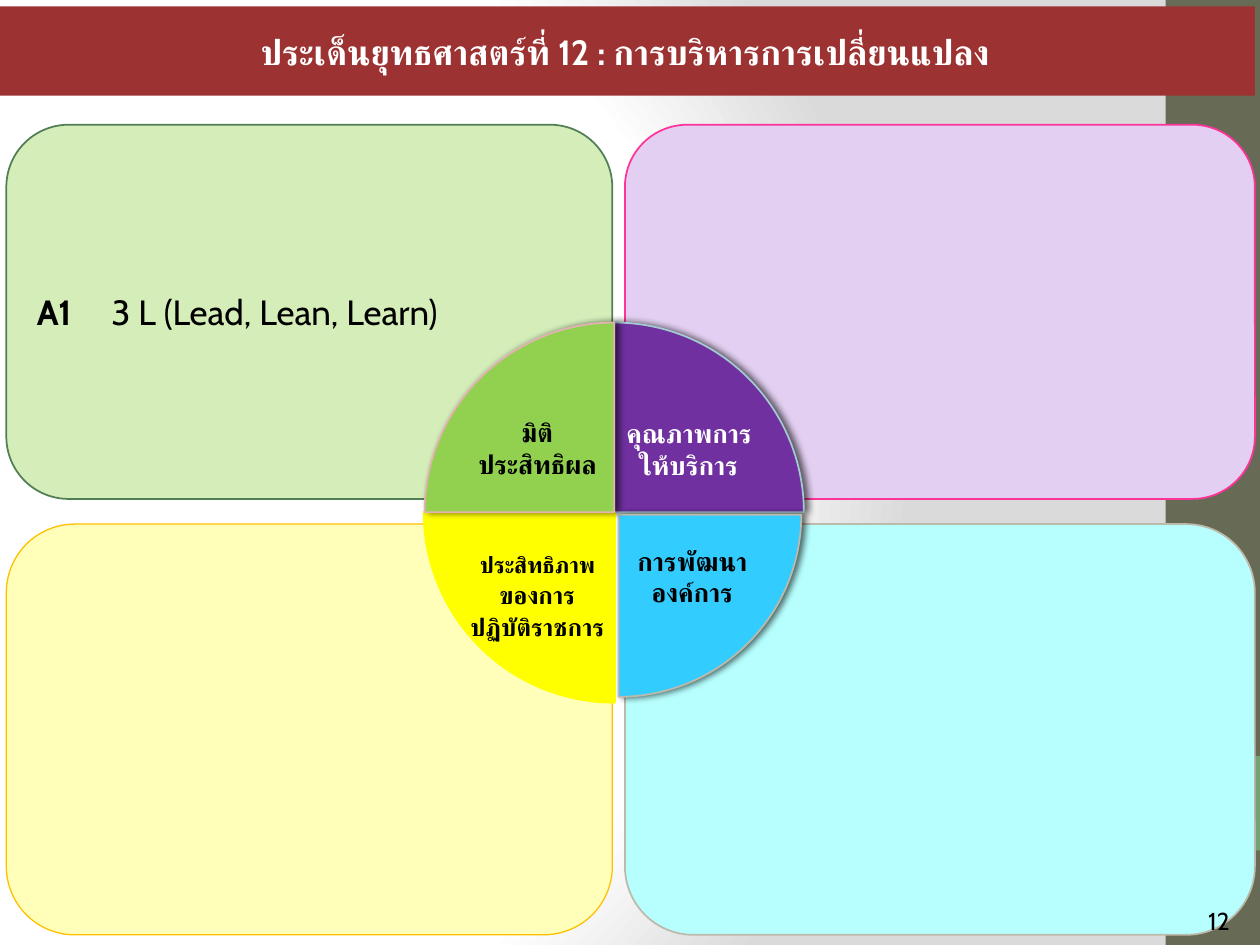
"""Build a slide of four strategy panels around a quartered wheel."""
from lxml import etree
from pptx import Presentation, util as u
from pptx.dml.color import RGBColor
from pptx.enum import shapes, text
from pptx.oxml import parse_xml
from pptx.oxml.ns import nsdecls, qn

WIDTH, HEIGHT = 10, 7.5
FONT = "Cabin"
COLORS = dict(
    white="FFFFFF", black="000000", red="9D3232", mist="DADADA", olive="676A55", sage="72A376",
    cream="FFFFB9", gold="FFC000", aqua="B7FFFF", stone="BCBAAB", lilac="E2CFF1", pink="FF3399",
    mint="D4EDB9", forest="527E56", purple="7030A0", ice="A3C9D3", sky="33CCFF",
    yellow="FFFF00", lime="92D050", rose="E4B2B2",
)
TITLE = "ประเด็นยุทธศาสตร์ที่ 12 : การบริหารการเปลี่ยนแปลง"
GOAL = [("A1\t", True), ("3 L (Lead, Lean, Learn)", False)]
COLUMNS = [(0.05, 4.81), (4.96, 5)]
ROWS = [(0.99, 2.97), (4.16, 3.26)]
PANELS = [
    (0, 1, "cream", "gold", 0.75, []),
    (1, 1, "aqua", "stone", 1, []),
    (1, 0, "lilac", "pink", 1, []),
    (0, 0, "mint", "forest", 1, GOAL),
]
WHEEL = (3.37, 2.56, 3.01, 3.01)
QUARTERS = [
    (WHEEL, (162, 0), "purple", "ice", 1, True,
     (4.91, 3.12), [("คุณภาพการให้บริการ", 15)], "white"),
    ((3.46, 2.64, 2.9, 2.89), (0, 54), "sky", "stone", 1, True,
     (4.94, 4.13), [("การพัฒนาองค์การ", 15)], "black"),
    (WHEEL, (54, 108), "yellow", "yellow", 2, False,
     (3.71, 4.27), [("ประสิทธิภาพ", 13), ("ของการปฏิบัติราชการ", 14)], "black"),
    (WHEEL, (108, 162), "lime", "rose", 1, True,
     (3.71, 3.11), [("มิติประสิทธิผล", 15)], "black"),
]
LABEL_SIZE = (1.11, 0.89)


def color(name):
    return RGBColor.from_string(COLORS[name])


def add_box(page, kind, place, fill, line=None, weight=1):
    box = page.shapes.add_shape(kind, *map(u.Inches, place))
    box.shadow.inherit = False
    box.fill.solid()
    box.fill.fore_color.rgb = color(fill)
    if line:
        box.line.color.rgb = color(line)
        box.line.width = u.Pt(weight)
    else:
        box.line.fill.background()
    return box


def add_span(para, words, size=20, bold=False, ink="black"):
    span = para.add_run()
    span.text = words
    span.font.size = u.Pt(size)
    span.font.bold = bold
    span.font.name = FONT
    span.font.color.rgb = color(ink)
    etree.SubElement(span._r.get_or_add_rPr(), qn("a:cs")).set("typeface", FONT)


def set_frame(box, inset=None, anchor=text.MSO_ANCHOR.MIDDLE, align=text.PP_ALIGN.CENTER):
    frame = box.text_frame
    frame.word_wrap = True
    frame.auto_size = text.MSO_AUTO_SIZE.NONE
    frame.vertical_anchor = anchor
    if inset is not None:
        frame.margin_left = frame.margin_right = u.Inches(inset)
        frame.margin_top = frame.margin_bottom = u.Inches(inset)
    para = frame.paragraphs[0]
    para.alignment = align
    return para


def add_shadow(box):
    effects = box._element.spPr.find(qn("a:effectLst"))
    effects.append(parse_xml(
        f'<a:outerShdw {nsdecls("a")} blurRad="{u.Pt(4)}" dist="{u.Pt(2)}" dir="0">'
        f'<a:srgbClr val="{COLORS["black"]}"><a:alpha val="60000"/></a:srgbClr></a:outerShdw>'))


def set_background(page):
    stops = "".join(
        f'<a:gs pos="{share * 1000}"><a:srgbClr val="{COLORS[name]}"/></a:gs>'
        for share, name in [(0, "white"), (75, "white"), (100, "mist")])
    page._element.cSld.insert(0, parse_xml(
        f'<p:bg {nsdecls("p", "a")}><p:bgPr><a:gradFill rotWithShape="1"><a:gsLst>{stops}</a:gsLst>'
        '<a:path path="circle"><a:fillToRect l="20000" t="50000" r="100000" b="50000"/></a:path>'
        '</a:gradFill><a:effectLst/></p:bgPr></p:bg>'))


def format_title(page):
    title = page.shapes.title
    page.shapes._spTree.append(title._element)
    title.left, title.top, title.width, title.height = map(u.Inches, (-0.04, 0.05, WIDTH, 0.71))
    title._element.spPr.append(parse_xml(
        f'<a:prstGeom {nsdecls("a")} prst="roundRect"><a:avLst>'
        '<a:gd name="adj" fmla="val 5700"/></a:avLst></a:prstGeom>'))
    title.fill.solid()
    title.fill.fore_color.rgb = color("red")
    add_span(set_frame(title, 0), TITLE, bold=True, ink="white")


def add_panel(page, column, row, fill, line, weight, spans):
    (left, width), (top, height) = COLUMNS[column], ROWS[row]
    box = add_box(page, shapes.MSO_SHAPE.ROUNDED_RECTANGLE, (left, top, width, height),
                  fill, line, weight)
    if spans:
        para = set_frame(box, align=text.PP_ALIGN.LEFT)
        indent = u.Inches(0.59)
        para._p.get_or_add_pPr().set("marL", str(indent))
        para._p.get_or_add_pPr().set("indent", str(-indent))
        for words, bold in spans:
            add_span(para, words, bold=bold)


def add_quarter(page, place, angles, fill, line, weight, shaded, corner, spans, ink):
    pie = add_box(page, shapes.MSO_SHAPE.PIE, place, fill, line, weight)
    pie.adjustments[0], pie.adjustments[1] = angles
    if shaded:
        add_shadow(pie)
    label = page.shapes.add_textbox(*map(u.Inches, corner + LABEL_SIZE))
    para = set_frame(label, 0.02)
    para.line_spacing = u.Pt(18)
    for words, size in spans:
        add_span(para, words, size, True, ink)


def main():
    deck = Presentation()
    deck.slide_width, deck.slide_height = u.Inches(WIDTH), u.Inches(HEIGHT)
    page = deck.slides.add_slide(deck.slide_layouts[5])
    set_background(page)
    bar = 0.75
    for top, height, fill in [(0, HEIGHT, "olive"), (6, bar, "sage")]:
        add_box(page, shapes.MSO_SHAPE.RECTANGLE, (WIDTH - bar, top, bar, height), fill)
    format_title(page)
    for panel in PANELS:
        add_panel(page, *panel)
    for quarter in QUARTERS:
        add_quarter(page, *quarter)
    number = page.shapes.add_textbox(*map(u.Inches, (9.49, 7.14, 0.51, 0.34)))
    add_span(set_frame(number, anchor=text.MSO_ANCHOR.TOP, align=text.PP_ALIGN.LEFT), "12", 14)
    deck.save("out.pptx")


if __name__ == "__main__":
    main()
